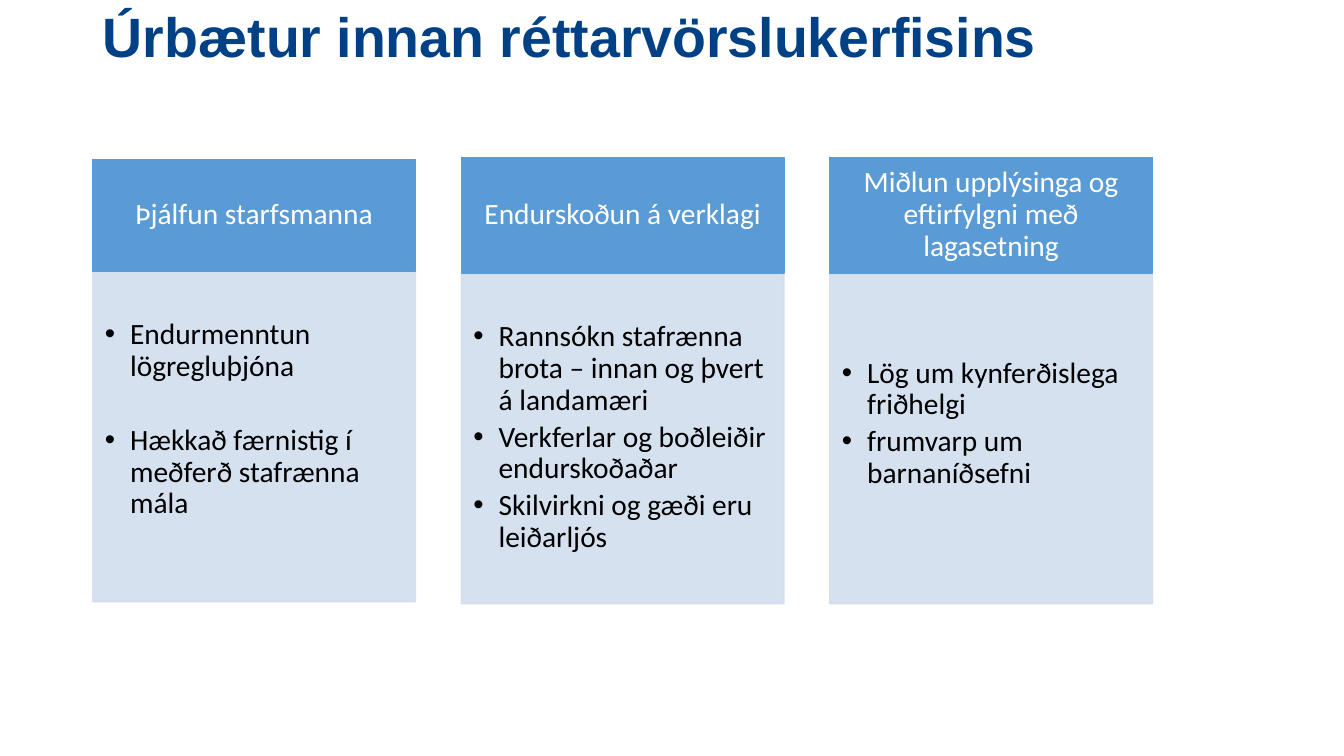
from lxml.etree import SubElement
from pptx import Presentation
from pptx.dml.color import RGBColor
from pptx.enum.shapes import MSO_SHAPE
from pptx.enum.text import MSO_ANCHOR, MSO_AUTO_SIZE, PP_ALIGN
from pptx.oxml.ns import qn
from pptx.util import Inches, Pt

THEME = {
    "title": {"name": "Arial", "size": Pt(39.6), "bold": True, "color": "004185"},
    "heading": {"name": "Calibri", "size": Pt(21), "bold": False, "color": "FFFFFF"},
    "list": {"name": "Calibri", "size": Pt(21), "bold": False, "color": "000000"},
    "heading_fill": "5B9BD5",
    "list_fill": "D2DEEF",
    "list_opacity": "90000",
}
LEFT, WIDTH, PITCH = 0.92, 3.2, 7.31 / 2
LIST_HEIGHT = 3.28
COLUMNS = [
    {"heading": "Þjálfun starfsmanna", "top": 1.58, "split": 2.69, "inset": 0.48,
     "gap": 30, "placeholder": 2,
     "items": ["Endurmenntun lögregluþjóna",
               "Hækkað færnistig í meðferð stafrænna mála"]},
    {"heading": "Endurskoðun á verklagi", "top": 1.56, "split": 2.71, "inset": 0.48,
     "gap": 3.6, "placeholder": 4,
     "items": ["Rannsókn stafrænna brota – innan og þvert á landamæri",
               "Verkferlar og boðleiðir endurskoðaðar",
               "Skilvirkni og gæði eru leiðarljós"]},
    {"heading": "Miðlun upplýsinga og eftirfylgni með lagasetning", "top": 1.56,
     "split": 2.71, "inset": 0.84, "gap": 3.6, "placeholder": 1,
     "items": ["Lög um kynferðislega friðhelgi", "frumvarp um barnaníðsefni"]},
]


def write(box, lines, style, align, anchor, insets, gap=0, bullet=False):
    frame = box.text_frame
    sides = ("margin_left", "margin_top", "margin_right", "margin_bottom")
    settings = dict(zip(sides, map(Inches, insets)))
    settings.update(word_wrap=True, auto_size=MSO_AUTO_SIZE.NONE, vertical_anchor=anchor)
    for name, value in settings.items():
        setattr(frame, name, value)
    for number, line in enumerate(lines):
        para = frame.add_paragraph() if number else frame.paragraphs[0]
        if bullet:
            properties = para._p.get_or_add_pPr()
            properties.set("marL", str(Inches(0.25)))
            properties.set("indent", str(-Inches(0.25)))
            SubElement(properties, qn("a:buFont"), typeface="Arial")
            SubElement(properties, qn("a:buChar"), char="•")
        spacing = {"alignment": align, "line_spacing": 0.9, "space_after": Pt(0),
                   "space_before": Pt(gap if number else 0)}
        for name, value in spacing.items():
            setattr(para, name, value)
        span = para.add_run()
        span.text = line
        for name in ("name", "size", "bold"):
            setattr(span.font, name, style[name])
        span.font.color.rgb = RGBColor.from_string(style["color"])


def paint(box, color):
    box.fill.solid()
    box.fill.fore_color.rgb = RGBColor.from_string(color)
    box.line.color.rgb = RGBColor.from_string(color)
    box.line.width = Pt(1)


deck = Presentation()
deck.slide_width, deck.slide_height = Inches(13.33), Inches(7.5)
page = deck.slides.add_slide(deck.slide_layouts.get_by_name("Comparison"))
placeholders = {box.placeholder_format.idx: box for box in page.placeholders}
unused = placeholders[3].element
unused.getparent().remove(unused)

title = page.shapes.title
title_place = {"left": LEFT, "top": 0.17, "width": 11.47, "height": 0.45}
for name, value in title_place.items():
    setattr(title, name, Inches(value))
write(title, ["Úrbætur innan réttarvörslukerfisins"], THEME["title"],
      PP_ALIGN.LEFT, MSO_ANCHOR.MIDDLE, (0.1, 0.05, 0.1, 0.05))

for index, column in enumerate(COLUMNS):
    left = LEFT + index * PITCH
    heading = page.shapes.add_shape(
        MSO_SHAPE.RECTANGLE, Inches(left), Inches(column["top"]),
        Inches(WIDTH), Inches(column["split"] - column["top"]))
    heading.shadow.inherit = False
    paint(heading, THEME["heading_fill"])
    write(heading, [column["heading"]], THEME["heading"], PP_ALIGN.CENTER,
          MSO_ANCHOR.MIDDLE, (0.16, 0.09, 0.16, 0.09))

    body = placeholders[column["placeholder"]]
    body_place = {"left": left, "top": column["split"],
                  "width": WIDTH, "height": LIST_HEIGHT}
    for name, value in body_place.items():
        setattr(body, name, Inches(value))
    paint(body, THEME["list_fill"])
    for color in body.element.spPr.iter(qn("a:srgbClr")):
        SubElement(color, qn("a:alpha"), val=THEME["list_opacity"])
    write(body, column["items"], THEME["list"], PP_ALIGN.LEFT, MSO_ANCHOR.TOP,
          (0.12, column["inset"], 0.16, 0.18), column["gap"], bullet=True)

deck.save("out.pptx")
